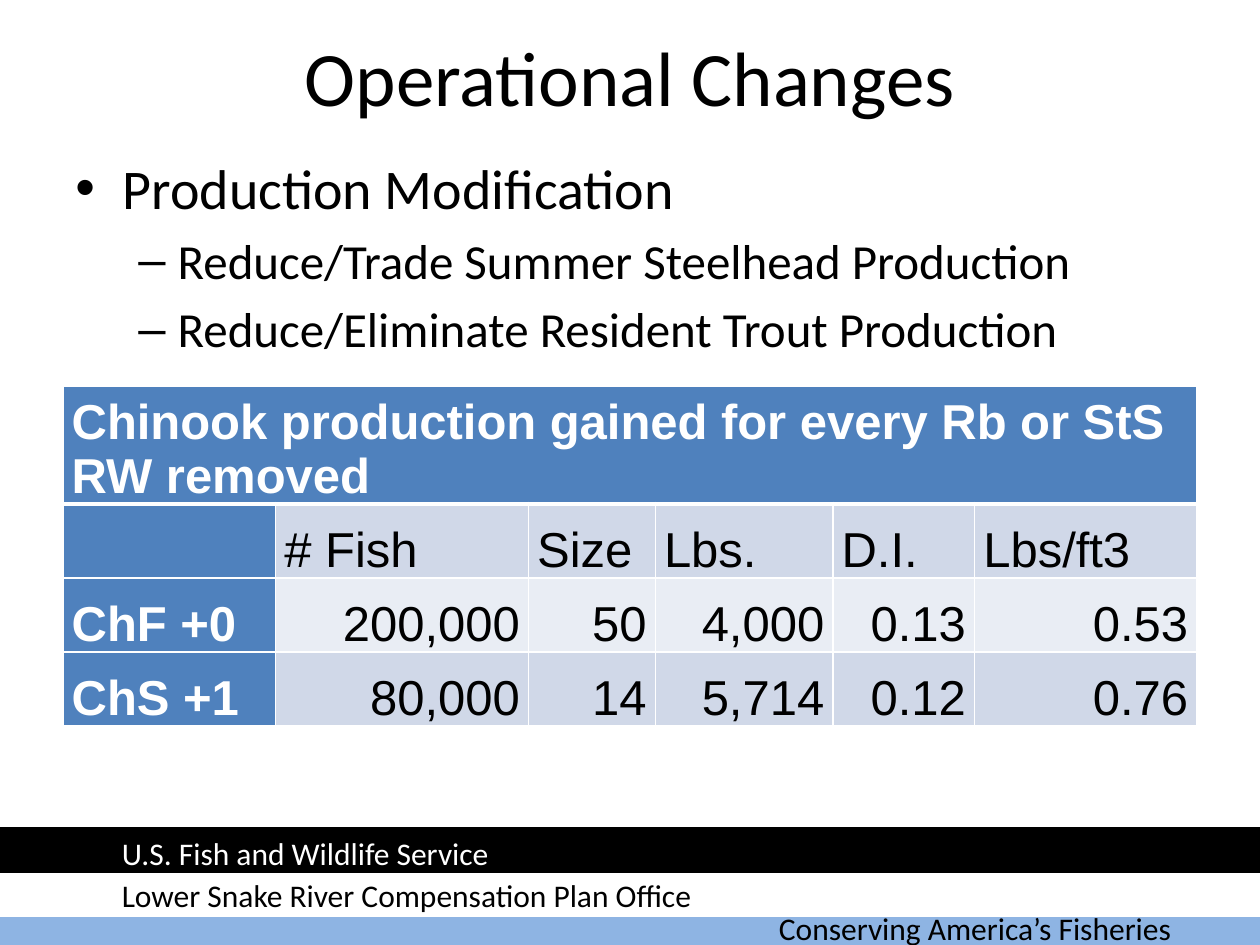
from lxml import etree
from pptx import Presentation
from pptx.dml.color import RGBColor
from pptx.enum.shapes import MSO_SHAPE
from pptx.enum.text import MSO_ANCHOR, PP_ALIGN
from pptx.oxml import parse_xml
from pptx.oxml.ns import nsdecls, qn
from pptx.util import Pt

RECTANGLE = MSO_SHAPE.RECTANGLE
MIDDLE, BOTTOM = MSO_ANCHOR.MIDDLE, MSO_ANCHOR.BOTTOM
LEFT, CENTER, RIGHT = PP_ALIGN.LEFT, PP_ALIGN.CENTER, PP_ALIGN.RIGHT
COLORS = {
    "black": "000000",
    "white": "FFFFFF",
    "sky": "8EB4E3",
    "header": "4F81BD",
    "band_dark": "D0D8E8",
    "band_light": "E9EDF4",
}


def rgb(name):
    return RGBColor.from_string(COLORS[name])


def write(paragraph, text, size, color="black", font="Calibri", bold=False, align=LEFT):
    paragraph.text = text
    paragraph.alignment = align
    paragraph.font.name = font
    paragraph.font.size = Pt(size)
    paragraph.font.bold = bold
    paragraph.font.color.rgb = rgb(color)


prs = Presentation()
prs.slide_width, prs.slide_height = Pt(720), Pt(540)
slide = prs.slides.add_slide(prs.slide_layouts[6])
shapes = slide.shapes

for left, top, color in [(-0.5, 516, "sky"), (0, 499, "white"), (0, 473.75, "black")]:
    band = shapes.add_shape(RECTANGLE, Pt(left), Pt(top), Pt(720), Pt(24))
    band.shadow.inherit = False
    band.fill.solid()
    band.fill.fore_color.rgb = rgb(color)
    band.line.color.rgb = rgb(color)
    band.line.width = Pt(2)

for left, top, width, text, color in [
    (438, 516, 264, "Conserving America’s Fisheries", "black"),
    (62.5, 473, 300, "U.S. Fish and Wildlife Service", "white"),
    (62.5, 497, 358, "Lower Snake River Compensation Plan Office", "black"),
]:
    footer = shapes.add_textbox(Pt(left), Pt(top), Pt(width), Pt(29)).text_frame
    footer.word_wrap = True
    write(footer.paragraphs[0], text, 18, color)

title = shapes.add_textbox(Pt(36), Pt(12), Pt(648), Pt(63)).text_frame
title.word_wrap = True
title.vertical_anchor = MIDDLE
write(title.paragraphs[0], "Operational Changes", 44, align=CENTER)

changes = shapes.add_textbox(Pt(36), Pt(84), Pt(648), Pt(132)).text_frame
changes.word_wrap = True
for index, (text, level, size, bullet, margin, indent) in enumerate([
    ("Production Modification", 0, 32, "•", 27, -27),
    ("Reduce/Trade Summer Steelhead Production", 1, 28, "–", 58.5, -22.5),
    ("Reduce/Eliminate Resident Trout Production", 1, 28, "–", 58.5, -22.5),
]):
    change = changes.add_paragraph() if index else changes.paragraphs[0]
    change.level = level
    if index:
        change.space_before = Pt(size * 0.2)
    properties = change._p.get_or_add_pPr()
    properties.set("marL", str(Pt(margin)))
    properties.set("indent", str(Pt(indent)))
    etree.SubElement(properties, qn("a:buFont"), typeface="Arial")
    etree.SubElement(properties, qn("a:buChar"), char=bullet)
    write(change, text, size)

rows = [
    ["Chinook production gained for every Rb or StS RW removed", "", "", "", "", ""],
    ["", "# Fish", "Size", "Lbs.", "D.I.", "Lbs/ft3"],
    ["ChF +0", "200,000", "50", "4,000", "0.13", "0.53"],
    ["ChS +1", "80,000", "14", "5,714", "0.12", "0.76"],
]
column_widths = [121.5, 144.5, 72.5, 101.5, 81, 127]
row_heights = [61.5, 42.25, 42.25, 42.25]
production = shapes.add_table(
    len(rows), len(column_widths), Pt(36), Pt(220.75), Pt(sum(column_widths)), Pt(sum(row_heights))
).table
production.first_col = True
for column, width in zip(production.columns, column_widths):
    column.width = Pt(width)
for row, height in zip(production.rows, row_heights):
    row.height = Pt(height)
production.cell(0, 0).merge(production.cell(0, len(column_widths) - 1))

for r, values in enumerate(rows):
    for c, value in enumerate(values):
        cell = production.cell(r, c)
        is_header = r == 0 or c == 0
        cell.margin_left = cell.margin_right = Pt(5)
        cell.margin_top = cell.margin_bottom = Pt(0)
        cell.vertical_anchor = BOTTOM
        cell.fill.solid()
        cell.fill.fore_color.rgb = rgb(
            "header" if is_header else "band_light" if r == 2 else "band_dark"
        )
        write(
            cell.text_frame.paragraphs[0], value, 28,
            "white" if is_header else "black", "Arial", is_header,
            RIGHT if r > 1 and c > 0 else LEFT,
        )
        for position, side in enumerate(["lnL", "lnR", "lnT", "lnB"]):
            is_thick = (r, side) in [(0, "lnB"), (1, "lnT")]
            border = parse_xml(
                f'<a:{side} {nsdecls("a")} w="{Pt(3 if is_thick else 1)}"><a:solidFill>'
                f'<a:srgbClr val="{COLORS["white"]}"/></a:solidFill></a:{side}>'
            )
            cell._tc.get_or_add_tcPr().insert(position, border)

prs.save("out.pptx")
